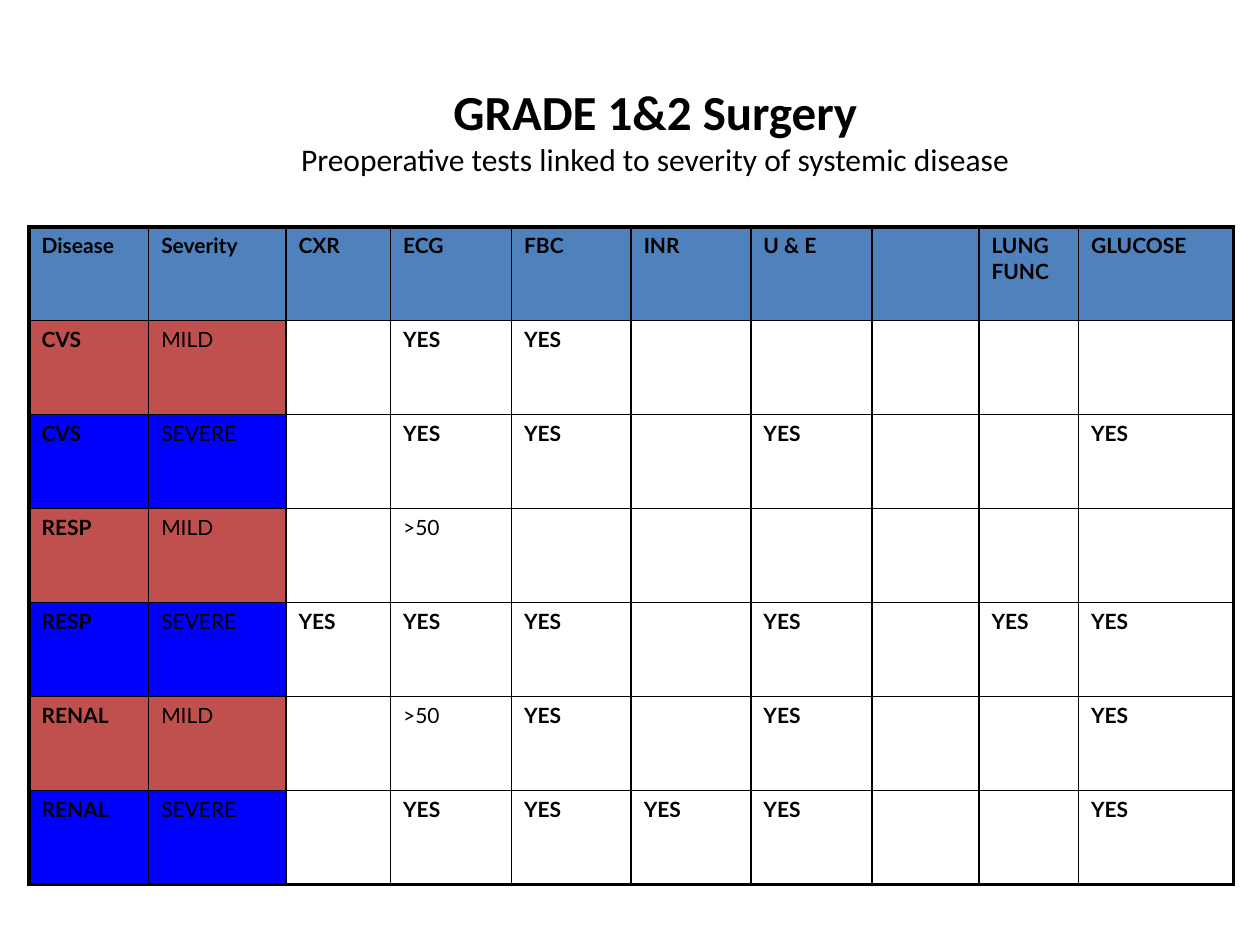
from lxml import etree
from pptx import Presentation
from pptx.dml.color import RGBColor
from pptx.enum.text import MSO_ANCHOR, PP_ALIGN
from pptx.oxml.ns import qn
from pptx.util import Inches, Pt

MIDDLE, CENTER = MSO_ANCHOR.MIDDLE, PP_ALIGN.CENTER
BLACK, WHITE = "000000", "FFFFFF"
HEAD_FILL = "4F81BD"
LEVEL_FILL = {"MILD": "C0504D", "SEVERE": "0000FF"}
THIN, THICK = 1, 2.25

TITLE = [("GRADE 1&2 Surgery", 28, True),
         ("Preoperative tests linked to severity of systemic disease", 18, False)]
HEADS = ["Disease", "Severity", "CXR", "ECG", "FBC", "INR", "U & E", "",
         "LUNG FUNC", "GLUCOSE"]
# Each row: disease, severity, and the result under each test that is named
TESTS = [
    ("CVS", "MILD", {"ECG": "YES", "FBC": "YES"}),
    ("CVS", "SEVERE", {"ECG": "YES", "FBC": "YES", "U & E": "YES", "GLUCOSE": "YES"}),
    ("RESP", "MILD", {"ECG": ">50"}),
    ("RESP", "SEVERE", {"CXR": "YES", "ECG": "YES", "FBC": "YES", "U & E": "YES",
                        "LUNG FUNC": "YES", "GLUCOSE": "YES"}),
    ("RENAL", "MILD", {"ECG": ">50", "FBC": "YES", "U & E": "YES", "GLUCOSE": "YES"}),
    ("RENAL", "SEVERE", {"ECG": "YES", "FBC": "YES", "INR": "YES", "U & E": "YES",
                         "GLUCOSE": "YES"}),
]
WIDTHS = [0.95, 1.09, 0.83, 0.96, 0.95, 0.95, 0.96, 0.85, 0.79, 1.23]
LEFT, TOP, ROW_HEIGHT = 0.23, 1.8, 0.746
PLAIN = {"MILD", "SEVERE", ">50"}


def color(code):
    return RGBColor.from_string(code)


def add_run(para, text, size, bold, face):
    run = para.add_run()
    run.text = text
    font = run.font
    font.size, font.bold, font.name = Pt(size), bold, face
    font.color.rgb = color(BLACK)


def add_border(cell, side, width):
    line = etree.SubElement(cell._tc.get_or_add_tcPr(), qn(f"a:ln{side}"),
                            w=str(Pt(width)))
    fill = etree.SubElement(line, qn("a:solidFill"))
    etree.SubElement(fill, qn("a:srgbClr"), val=BLACK)


def add_title(slide):
    title = slide.shapes.title
    title.left, title.top = Inches(0.94), Inches(0.23)
    title.width, title.height = Inches(8.52), Inches(1.6)
    frame = title.text_frame
    frame.word_wrap, frame.vertical_anchor = True, MIDDLE
    para = frame.paragraphs[0]
    para.alignment = CENTER
    for i, (text, size, bold) in enumerate(TITLE):
        if i:
            para.add_line_break()
        add_run(para, text, size, bold, "Calibri")


def add_grid(slide):
    rows = [HEADS] + [[name, level] + [found.get(head, "") for head in HEADS[2:]]
                      for name, level, found in TESTS]
    last_row, last_col = len(rows) - 1, len(HEADS) - 1
    table = slide.shapes.add_table(
        len(rows), len(HEADS), Inches(LEFT), Inches(TOP),
        Inches(sum(WIDTHS)), Inches(ROW_HEIGHT * len(rows))).table
    for col, width in zip(table.columns, WIDTHS):
        col.width = Inches(width)
    for r, row in enumerate(rows):
        table.rows[r].height = Inches(ROW_HEIGHT)
        for c, text in enumerate(row):
            cell = table.cell(r, c)
            edges = {"L": c == 0, "R": c == last_col, "T": r == 0, "B": r == last_row}
            for side, outer in edges.items():
                add_border(cell, side, THICK if outer else THIN)
            if r == 0:
                shade = HEAD_FILL
            else:
                shade = LEVEL_FILL[row[1]] if c < 2 else WHITE
            cell.fill.solid()
            cell.fill.fore_color.rgb = color(shade)
            if text:
                para = cell.text_frame.paragraphs[0]
                para.space_before = Pt(2.4)
                add_run(para, text, 12, text not in PLAIN, "Lato")


def main():
    deck = Presentation()
    deck.slide_width, deck.slide_height = Inches(10), Inches(7.5)
    slide = deck.slides.add_slide(deck.slide_layouts[5])
    add_grid(slide)
    add_title(slide)
    deck.save("out.pptx")


if __name__ == "__main__":
    main()
